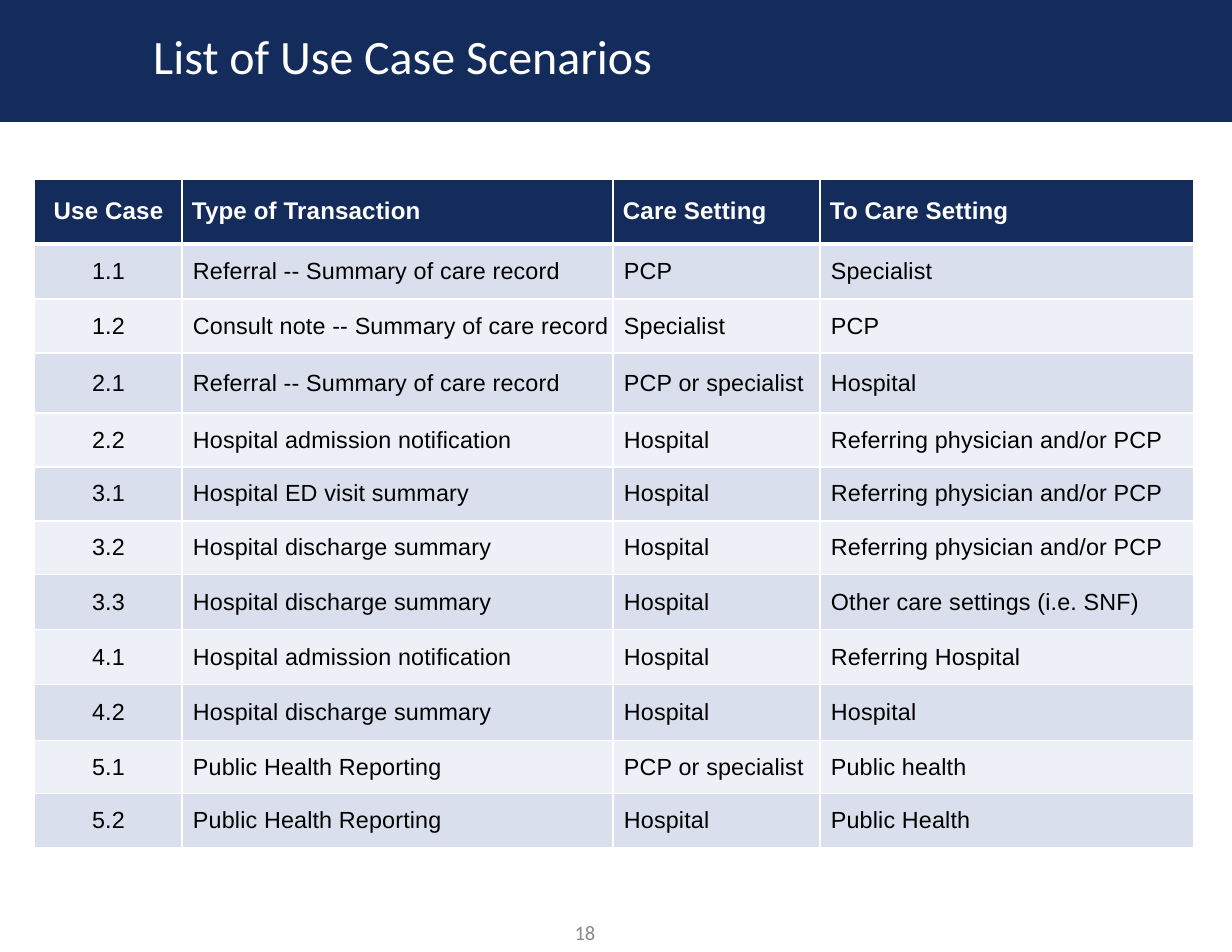
from typing import NamedTuple

from lxml import etree
from pptx import Presentation
from pptx.dml.color import RGBColor
from pptx.enum.shapes import MSO_SHAPE
from pptx.enum.text import MSO_ANCHOR, MSO_AUTO_SIZE, PP_ALIGN
from pptx.oxml.ns import qn
from pptx.util import Pt

RECT = MSO_SHAPE.RECTANGLE
MIDDLE = MSO_ANCHOR.MIDDLE
LEFT, CENTER = PP_ALIGN.LEFT, PP_ALIGN.CENTER
NO_FIT = MSO_AUTO_SIZE.NONE

SCALE = 914400 / 112
NAVY, WHITE, BLACK, GREY = "142C5C", "FFFFFF", "000000", "898989"
BANDS = ("DADFED", "EDF0F6")
WIDTHS = (148, 431, 207, 374)


class Row(NamedTuple):
    height: int
    case: str
    kind: str
    source: str
    target: str


ROWS = (
    Row(65, "Use Case", "Type of Transaction", "Care Setting", "To Care Setting"),
    Row(55, "1.1", "Referral -- Summary of care record", "PCP", "Specialist"),
    Row(54, "1.2", "Consult note -- Summary of care record", "Specialist", "PCP"),
    Row(60, "2.1", "Referral -- Summary of care record", "PCP or specialist", "Hospital"),
    Row(54, "2.2", "Hospital admission notification", "Hospital", "Referring physician and/or PCP"),
    Row(54, "3.1", "Hospital ED visit summary", "Hospital", "Referring physician and/or PCP"),
    Row(54, "3.2", "Hospital discharge summary", "Hospital", "Referring physician and/or PCP"),
    Row(55, "3.3", "Hospital discharge summary", "Hospital", "Other care settings (i.e. SNF)"),
    Row(55, "4.1", "Hospital admission notification", "Hospital", "Referring Hospital"),
    Row(56, "4.2", "Hospital discharge summary", "Hospital", "Hospital"),
    Row(53, "5.1", "Public Health Reporting", "PCP or specialist", "Public health"),
    Row(54, "5.2", "Public Health Reporting", "Hospital", "Public Health"),
)


def px(count: int) -> int:
    return round(count * SCALE)


def color(code: str) -> RGBColor:
    return RGBColor.from_string(code)


def write(frame, text: str, font: str, size: float, code: str,
          align=LEFT, bold: bool = False):
    """Fill a frame with one styled paragraph and return it."""
    frame.word_wrap = True
    para = frame.paragraphs[0]
    para.text = text
    para.alignment = align
    para.font.name = font
    para.font.size = Pt(size)
    para.font.bold = bold
    para.font.color.rgb = color(code)
    return para


def edge(cell, side: str, width: float) -> None:
    line = etree.SubElement(cell._tc.get_or_add_tcPr(), qn(f"a:ln{side}"), w=str(Pt(width)))
    fill = etree.SubElement(line, qn("a:solidFill"))
    etree.SubElement(fill, qn("a:srgbClr"), val=WHITE)


def draw_cell(cell, text: str, row: int, col: int) -> None:
    head = row == 0
    for side in "LRTB":
        thick = (side == "B" and row == 0) or (side == "T" and row == 1)
        edge(cell, side, 3 if thick else 1)
    cell.fill.solid()
    cell.fill.fore_color.rgb = color(NAVY if head else BANDS[(row - 1) % 2])
    cell.vertical_anchor = MIDDLE
    cell.margin_top = cell.margin_bottom = cell.margin_right = 0
    cell.margin_left = px(1 if col == 0 else 10 if head else 11)
    para = write(cell.text_frame, text, "Arial", 15.5 if head else 15,
                 WHITE if head else BLACK, LEFT if col else CENTER, head)
    para.runs[0].font._element.set("spc", "10")


def draw_table(slide) -> None:
    high = sum(row.height for row in ROWS)
    table = slide.shapes.add_table(len(ROWS), len(WIDTHS), px(34), px(179),
                                   px(sum(WIDTHS)), px(high)).table
    for col, width in zip(table.columns, WIDTHS):
        col.width = px(width)
    for r, row in enumerate(ROWS):
        table.rows[r].height = px(row.height)
        for c, text in enumerate(row[1:]):
            draw_cell(table.cell(r, c), text, r, c)


def draw_head(slide, width: int) -> None:
    """Draw the title on a band that lies behind it."""
    band = slide.shapes.add_shape(RECT, 0, 0, width, px(122))
    band.shadow.inherit = False
    band.fill.solid()
    band.fill.fore_color.rgb = color(NAVY)
    band.line.fill.background()
    title = slide.shapes.title
    title._element.addprevious(band._element)
    title.left, title.top, title.width, title.height = map(px, (142, 16, 698, 78))
    frame = title.text_frame
    frame.auto_size = NO_FIT
    frame.vertical_anchor = MIDDLE
    write(frame, "List of Use Case Scenarios", "Calibri", 30.8, WHITE)


def draw_number(slide) -> None:
    frame = slide.shapes.add_textbox(*map(px, (538, 912, 94, 40))).text_frame
    frame.vertical_anchor = MIDDLE
    write(frame, "18", "Calibri", 13.2, GREY, CENTER)


def main() -> None:
    deck = Presentation()
    deck.slide_width, deck.slide_height = px(1232), px(952)
    slide = deck.slides.add_slide(deck.slide_layouts[5])
    draw_head(slide, deck.slide_width)
    draw_table(slide)
    draw_number(slide)
    deck.save("out.pptx")


if __name__ == "__main__":
    main()
